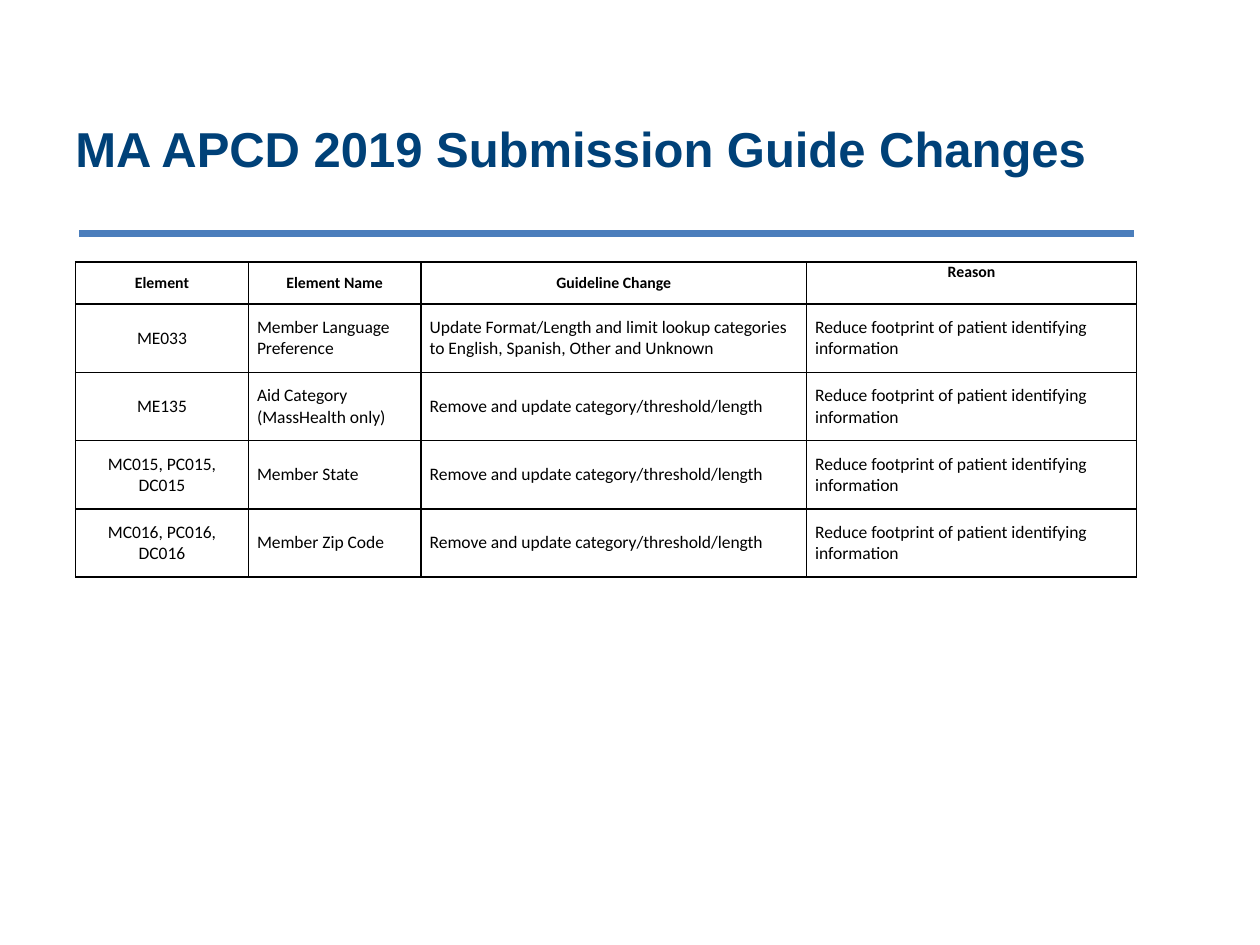
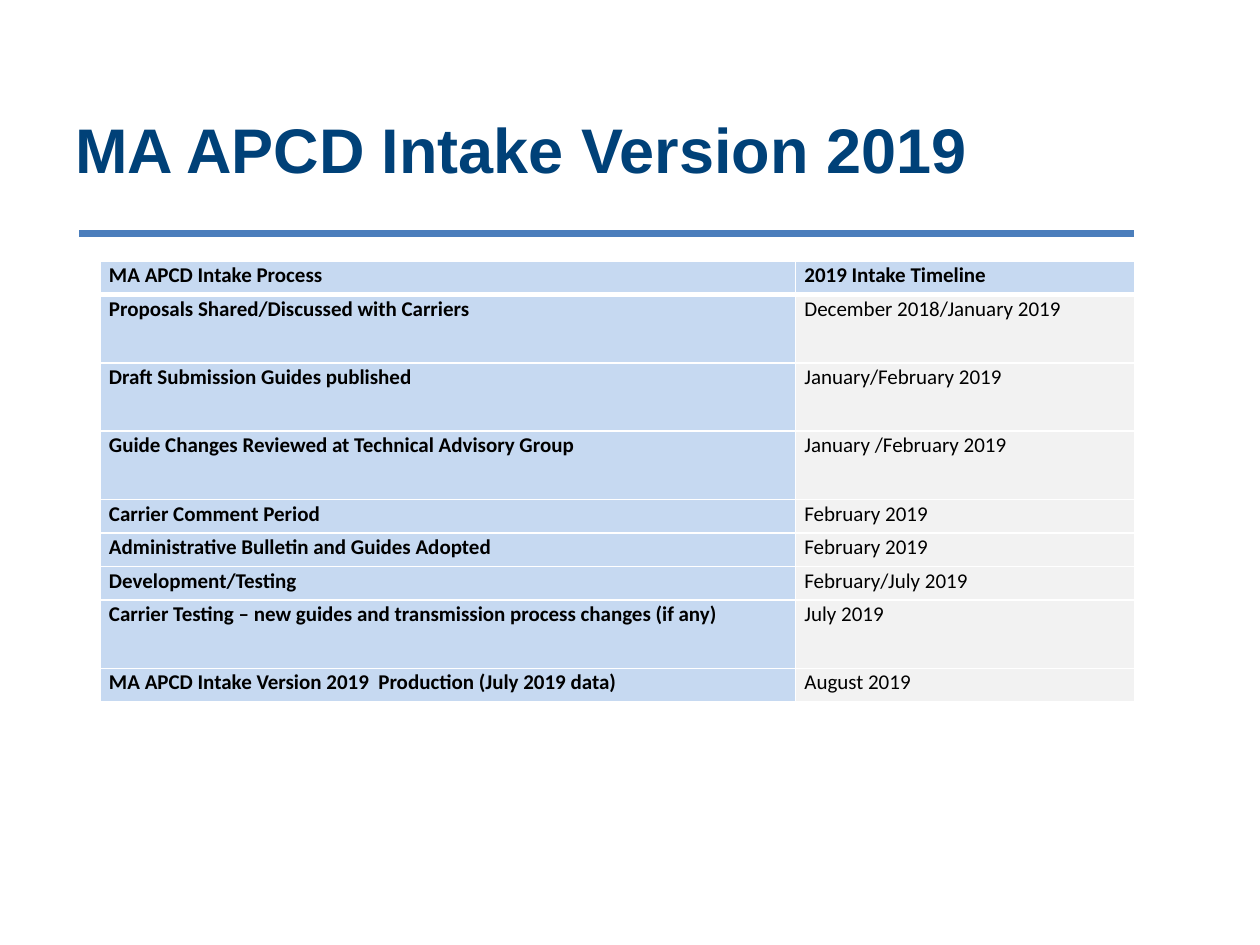
from lxml.etree import SubElement
from pptx import Presentation
from pptx.dml.color import RGBColor
from pptx.enum.shapes import MSO_CONNECTOR
from pptx.enum.text import MSO_ANCHOR, PP_ALIGN
from pptx.oxml.ns import qn
from pptx.util import Pt

HUES = {
    "title": "004178",
    "rule": "4B7EBC",
    "text": "000000",
    "grid": "000000",
    "gap": "FFFFFF",
    "head": "C6D9F1",
    "date": "F2F2F2",
}
MID, TOP = MSO_ANCHOR.MIDDLE, MSO_ANCHOR.TOP
LEFT, CENTER = PP_ALIGN.LEFT, PP_ALIGN.CENTER


def write(para, text, font, size, hue, bold):
    run = para.add_run()
    run.text = text
    run.font.name = font
    run.font.size = Pt(size)
    run.font.bold = bold
    run.font.color.rgb = RGBColor.from_string(HUES[hue])


def edge(cell, hue, widths):
    props = cell._tc.get_or_add_tcPr()
    for side, width in zip("LRTB", widths):
        line = SubElement(props, qn(f"a:ln{side}"), w=str(Pt(width)))
        fill = SubElement(line, qn("a:solidFill"))
        SubElement(fill, qn("a:srgbClr"), val=HUES[hue])


reduce = "Reduce footprint of patient identifying information"
remove = "Remove and update category/threshold/length"
changes = [
    ("Element", "Element Name", "Guideline Change", "Reason"),
    ("ME033", "Member Language Preference",
     "Update Format/Length and limit lookup categories to English, Spanish, Other and Unknown", reduce),
    ("ME135", "Aid Category (MassHealth only)", remove, reduce),
    ("MC015, PC015, DC015", "Member State", remove, reduce),
    ("MC016, PC016, DC016", "Member Zip Code", remove, reduce),
]
steps = [
    ("MA APCD Intake Process", "2019 Intake Timeline"),
    ("Proposals Shared/Discussed with Carriers", "December 2018/January 2019"),
    ("Draft Submission Guides published", "January/February 2019"),
    ("Guide Changes Reviewed at Technical Advisory Group", "January /February 2019"),
    ("Carrier Comment Period", "February 2019"),
    ("Administrative Bulletin and Guides Adopted", "February 2019"),
    ("Development/Testing", "February/July 2019"),
    ("Carrier Testing – new guides and transmission process changes (if any)", "July 2019"),
    ("MA APCD Intake Version 2019  Production (July 2019 data)", "August 2019"),
]
low, high = 19.2, 39
pages = [
    ("MA APCD 2019 Submission Guide Changes", 28, changes, 43.2, 149.8,
     [98.7, 98.7, 220.3, 188.6], [24] + [high] * 4),
    ("MA APCD Intake Version 2019", 36, steps, 57.3, 149.2,
     [397.4, 193.7], [low] + [high] * 3 + [low] * 3 + [high, low]),
]

deck = Presentation()
deck.slide_width, deck.slide_height = Pt(720), Pt(540)
grids = []
for title, size, rows, left, top, widths, heights in pages:
    slide = deck.slides.add_slide(deck.slide_layouts[6])
    rule = slide.shapes.add_connector(
        MSO_CONNECTOR.STRAIGHT, Pt(45.2), Pt(133.4), Pt(648), Pt(133.4))
    rule.line.width = Pt(4)
    rule.line.color.rgb = RGBColor.from_string(HUES["rule"])
    SubElement(rule._element.spPr, qn("a:effectLst"))

    frame = slide.shapes.add_textbox(Pt(36), Pt(44.6), Pt(612), Pt(80)).text_frame
    frame.word_wrap = True
    frame.vertical_anchor = MID
    write(frame.paragraphs[0], title, "Arial", size, "title", True)

    grid = slide.shapes.add_table(
        len(rows), len(widths), Pt(left), Pt(top), Pt(sum(widths)), Pt(sum(heights))).table
    grid.first_row = grid.horz_banding = False
    for col, width in zip(grid.columns, widths):
        col.width = Pt(width)
    for row, height in zip(grid.rows, heights):
        row.height = Pt(height)
    for cell in grid.iter_cells():
        cell.margin_left = cell.margin_right = Pt(5)
        cell.margin_top = cell.margin_bottom = 0
    grids.append(grid)

guide, plan = grids
for r, row in enumerate(changes):
    for c, text in enumerate(row):
        cell = guide.cell(r, c)
        edge(cell, "grid", [1] * 4)
        cell.fill.background()
        cell.vertical_anchor = TOP if (r, c) == (0, 3) else MID
        para = cell.text_frame.paragraphs[0]
        para.alignment = CENTER if r == 0 or c == 0 else LEFT
        write(para, text, "Calibri", 10 if r else 9, "text", r == 0)

for r, row in enumerate(steps):
    for c, text in enumerate(row):
        cell = plan.cell(r, c)
        main = r == 0 or c == 0
        edge(cell, "gap", [1, 1, 3 if r == 1 else 1, 3 if r == 0 else 1])
        cell.fill.solid()
        cell.fill.fore_color.rgb = RGBColor.from_string(HUES["head" if main else "date"])
        cell.vertical_anchor = TOP
        para = cell.text_frame.paragraphs[0]
        para.line_spacing = 1.07
        write(para, text, "Calibri", 12, "text", main)

deck.save("out.pptx")
